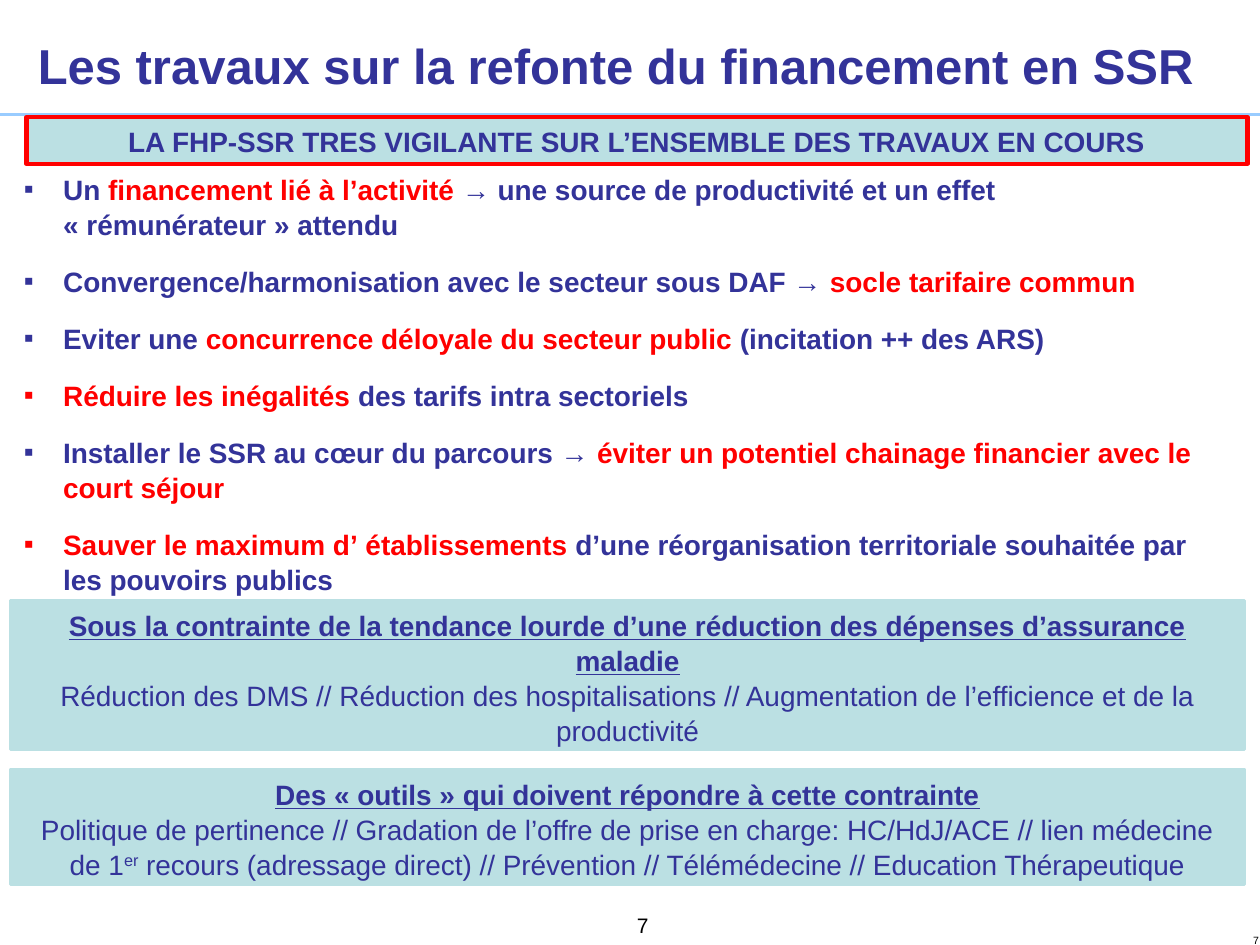
from lxml.etree import SubElement
from pptx import Presentation
from pptx.dml.color import RGBColor
from pptx.enum.shapes import MSO_CONNECTOR, MSO_SHAPE
from pptx.enum.text import MSO_ANCHOR, PP_ALIGN
from pptx.oxml.ns import qn
from pptx.util import Pt

NAVY = RGBColor(0x33, 0x33, 0x99)
RED = RGBColor(0xFF, 0x00, 0x00)
TEAL = RGBColor(0xBB, 0xE0, 0xE3)
SKY = RGBColor(0x99, 0xCC, 0xFF)
BLACK = RGBColor(0x00, 0x00, 0x00)
FONT = "Arial"
LINE_SPACING = 1.04


def add_run(paragraph, text, size=16, color=NAVY, bold=False, underline=False):
    run = paragraph.add_run()
    run.text = text
    font = run.font
    font.name, font.size, font.bold = FONT, Pt(size), bold
    font.color.rgb = color
    if underline:
        font.underline = True
    return run


def add_panel(left, top, width, height, line_color, line_width):
    """Add a teal rectangle and return its text frame."""
    panel = slide.shapes.add_shape(
        MSO_SHAPE.RECTANGLE, Pt(left), Pt(top), Pt(width), Pt(height))
    panel.shadow.inherit = False
    panel.fill.solid()
    panel.fill.fore_color.rgb = TEAL
    panel.line.color.rgb = line_color
    panel.line.width = Pt(line_width)
    panel.text_frame.word_wrap = True
    panel.text_frame.vertical_anchor = MSO_ANCHOR.TOP
    return panel.text_frame


presentation = Presentation()
presentation.slide_width, presentation.slide_height = Pt(720), Pt(540)
slide = presentation.slides.add_slide(presentation.slide_layouts[5])

# Title and rule below it
title = slide.shapes.title
title.left, title.top, title.width, title.height = Pt(14.4), Pt(15.1), Pt(680.4), Pt(41)
title.text_frame.vertical_anchor = MSO_ANCHOR.TOP
paragraph = title.text_frame.paragraphs[0]
paragraph.alignment = PP_ALIGN.LEFT
paragraph.line_spacing = LINE_SPACING
add_run(paragraph, "Les travaux sur la refonte du financement en SSR", 28, bold=True)

rule = slide.shapes.add_connector(
    MSO_CONNECTOR.STRAIGHT, Pt(0), Pt(65.5), Pt(720), Pt(65.5))
rule.line.color.rgb = SKY
rule.line.width = Pt(1.5)
SubElement(rule.element.spPr, qn("a:effectLst"))

# Banner
paragraph = add_panel(15.1, 67, 697.7, 26.6, RED, 2.5).paragraphs[0]
paragraph.alignment = PP_ALIGN.CENTER
paragraph.line_spacing = LINE_SPACING
add_run(paragraph, "LA FHP-SSR TRES VIGILANTE SUR L’ENSEMBLE DES TRAVAUX EN COURS", bold=True)

# Bullet list
bullets = [
    [("Un ", NAVY), ("financement lié à l’activité ", RED),
     ("→ une source de productivité et un effet «\u00a0rémunérateur\u00a0» attendu", NAVY)],
    [("Convergence/harmonisation avec le secteur sous DAF → ", NAVY),
     ("socle tarifaire commun", RED)],
    [("Eviter une ", NAVY), ("concurrence déloyale du secteur public ", RED),
     ("(incitation ++ des ARS)", NAVY)],
    [("Réduire les inégalités ", RED), ("des tarifs intra sectoriels", NAVY)],
    [("Installer le SSR au cœur du parcours → ", NAVY),
     ("éviter un potentiel chainage financier avec le court séjour", RED)],
    [("Sauver le maximum d’\u00a0établissements ", RED),
     ("d’une réorganisation territoriale souhaitée par les pouvoirs publics", NAVY)],
]
bullet_box = slide.shapes.add_textbox(Pt(6.5), Pt(94.3), Pt(687.6), Pt(245.5))
text_frame = bullet_box.text_frame
text_frame.word_wrap = True
for index, parts in enumerate(bullets):
    paragraph = text_frame.add_paragraph() if index else text_frame.paragraphs[0]
    paragraph.line_spacing = LINE_SPACING
    if index:
        paragraph.space_before = Pt(12.6)
    properties = paragraph._p.get_or_add_pPr()
    properties.set("marL", str(Pt(22.5)))
    properties.set("indent", str(-Pt(22.5)))
    SubElement(properties, qn("a:buFont"), typeface=FONT)
    SubElement(properties, qn("a:buChar"), char="▪")
    for text, color in parts:
        add_run(paragraph, text, color=color, bold=True)

# Conclusion panels: underlined heading, then plain text with optional superscript
panels = [
    (343.4, 85,
     "Sous la contrainte de la tendance lourde d’une réduction des dépenses d’assurance maladie",
     ["Réduction des DMS // Réduction des hospitalisations // "
      "Augmentation de l’efficience et de la productivité"]),
    (440, 65.5,
     "Des «\u00a0outils\u00a0» qui doivent répondre à cette contrainte",
     ["Politique de pertinence // Gradation de l’offre de prise en charge: "
      "HC/HdJ/ACE // lien médecine de 1", "er",
      " recours (adressage direct) // Prévention // Télémédecine // Education Thérapeutique"]),
]
for top, height, heading, body in panels:
    text_frame = add_panel(5.8, top, 705.6, height, TEAL, 1.75)
    add_run(text_frame.paragraphs[0], heading, bold=True, underline=True)
    body_paragraph = text_frame.add_paragraph()
    for text in body:
        run = add_run(body_paragraph, text)
        if text == "er":
            run.font._element.set("baseline", "30000")
    for paragraph in text_frame.paragraphs:
        paragraph.alignment = PP_ALIGN.CENTER
        paragraph.line_spacing = LINE_SPACING

# Page numbers
for left, top, size, alignment in [
        (644.4, 529.9, 6, PP_ALIGN.RIGHT), (326.2, 517.7, 12, PP_ALIGN.CENTER)]:
    number_box = slide.shapes.add_textbox(Pt(left), Pt(top), Pt(82.1), Pt(22.3))
    number_box.text_frame.word_wrap = True
    paragraph = number_box.text_frame.paragraphs[0]
    paragraph.alignment = alignment
    add_run(paragraph, "7", size, BLACK)

presentation.save("out.pptx")
